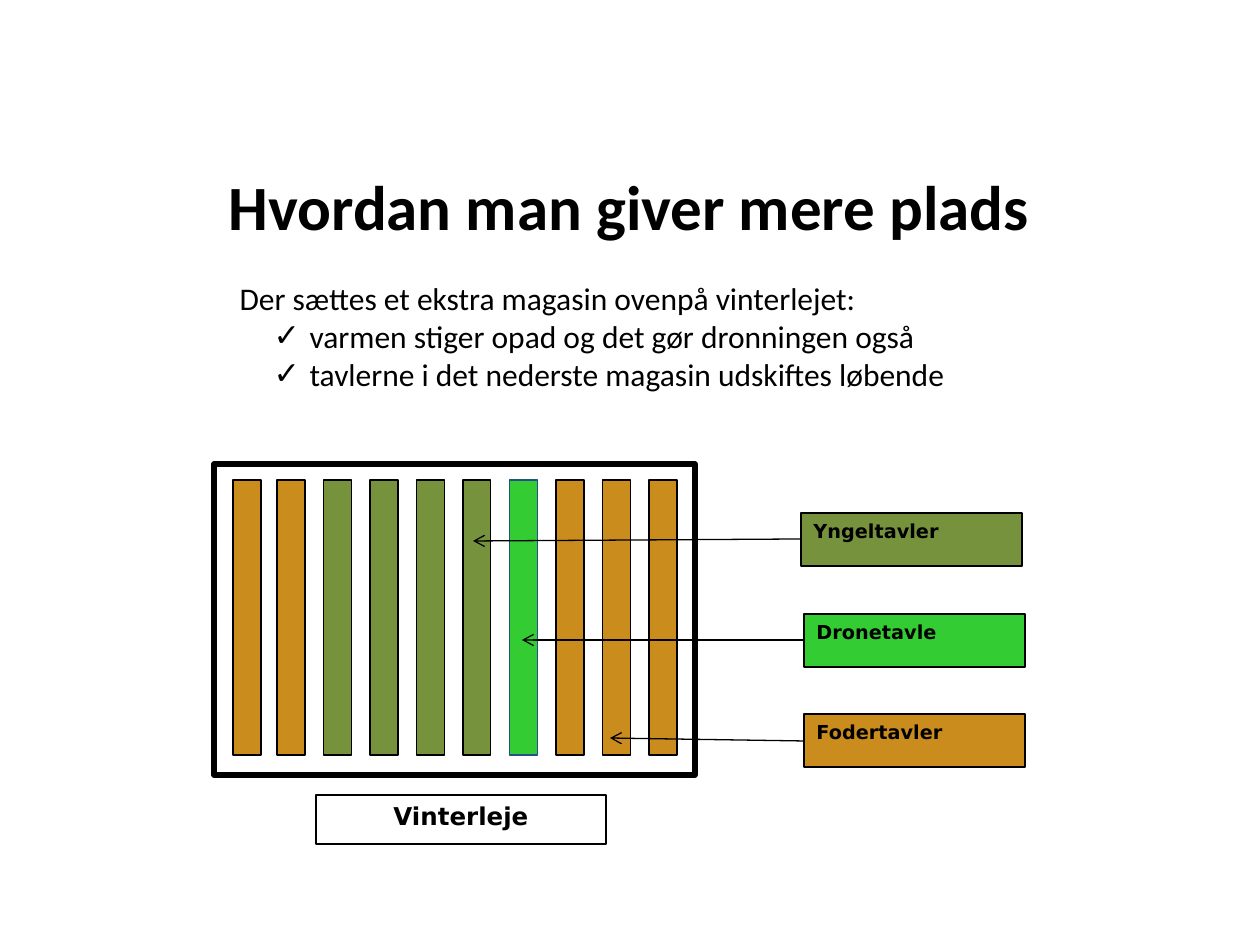
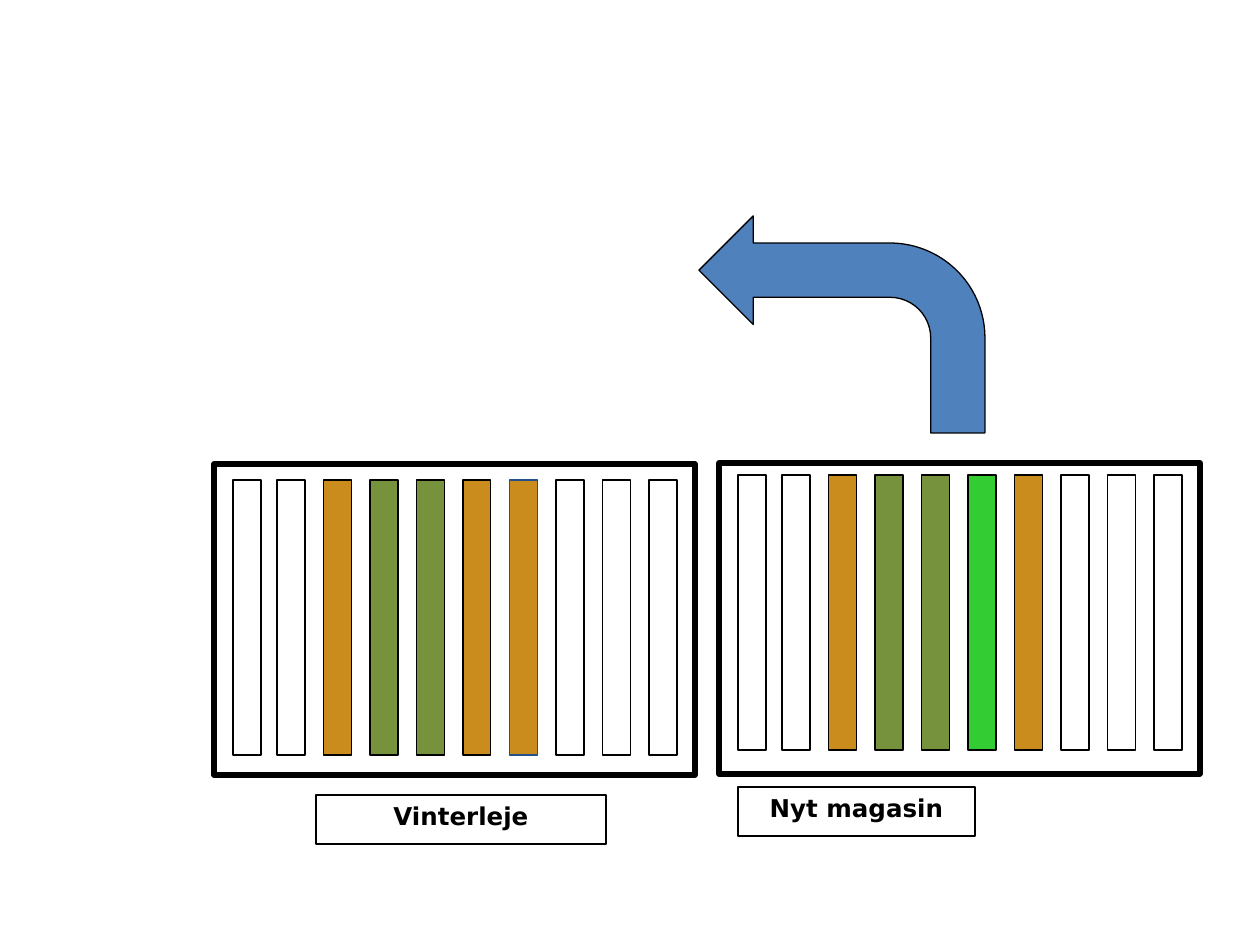
from lxml import etree
from pptx import Presentation
from pptx.dml.color import RGBColor
from pptx.enum.shapes import MSO_CONNECTOR, MSO_SHAPE
from pptx.enum.text import MSO_ANCHOR, MSO_AUTO_SIZE, PP_ALIGN
from pptx.oxml.ns import qn
from pptx.util import Emu, Pt

RECT, BENT_ARROW = MSO_SHAPE.RECTANGLE, MSO_SHAPE.BENT_ARROW
STRAIGHT = MSO_CONNECTOR.STRAIGHT
LEFT, CENTER = PP_ALIGN.LEFT, PP_ALIGN.CENTER
TOP, MIDDLE = MSO_ANCHOR.TOP, MSO_ANCHOR.MIDDLE
NO_AUTOSIZE = MSO_AUTO_SIZE.NONE

# Content
TITLE = "Hvordan man giver mere plads"
INTRO = "Der sættes et ekstra magasin ovenpå vinterlejet:"
REASONS = [
    "varmen stiger opad og det gør dronningen også",
    "tavlerne i det nederste magasin udskiftes løbende",
]
# Frames from left to right: F = food, Y = brood, D = drone, T = empty
WINTER_FRAMES = "FFYYYYDFFF"
WINTER_FRAMES_AFTER = "TTFYYFFTTT"
NEW_FRAMES = "TTFYYDFTTT"
# Label, frame kind, left, top, arrow start and arrow tip
LEGEND = [
    ("Yngeltavler", "Y", 801, 513, (801, 539), (473, 541)),
    ("Dronetavle", "D", 804, 614, (804, 640), (522, 640)),
    ("Fodertavler", "F", 804, 714, (804, 741), (610, 738)),
]

# Shared style
COLORS = {
    "F": "CA8C1C", "Y": "76923C", "D": "33CC33", "T": "FFFFFF",
    "white": "FFFFFF", "black": "000000", "blue": "4F81BD",
    "blue_edge": "23518B",
}
HEAD_FONT, LABEL_FONT = "Calibri", "DejaVu Sans"
PX = 914400 / 126
HIVE_W, HIVE_H = 481, 311
FRAME_W, FRAME_H = 28, 275
FIRST_FRAME, SECOND_FRAME, FRAME_STEP = 19, 63, 46.5
# Hive left and top, frame top, caption box
WINTER = {"left": 214, "top": 464, "frame_top": 480,
          "caption": "Vinterleje", "box": (316, 795, 290, 49)}
NEW = {"left": 719, "top": 463, "frame_top": 475,
       "caption": "Nyt magasin", "box": (738, 787, 237, 49)}


def px(value):
    return Emu(round(value * PX))


def rgb(name):
    return RGBColor.from_string(COLORS[name])


def format_text(paragraph, font, size, bold, align):
    paragraph.alignment = align
    for run in paragraph.runs:
        run.font.name, run.font.size, run.font.bold = font, Pt(size), bold
        run.font.color.rgb = rgb("black")


def add_box(slide, box, fill, edge="black", weight=0.75, kind=RECT):
    shape = slide.shapes.add_shape(kind, *map(px, box))
    shape.shadow.inherit = False
    shape.fill.solid()
    shape.fill.fore_color.rgb = rgb(fill)
    shape.line.color.rgb = rgb(edge)
    shape.line.width = Pt(weight)
    return shape


def add_label(slide, box, text, fill, size, align):
    frame = add_box(slide, box, fill).text_frame
    frame.vertical_anchor = TOP
    frame.text = text
    format_text(frame.paragraphs[0], LABEL_FONT, size, True, align)


def add_hive(slide, hive, frames, edged=None):
    add_box(slide, (hive["left"], hive["top"], HIVE_W, HIVE_H), "white", weight=3)
    for i, kind in enumerate(frames):
        offset = SECOND_FRAME + (i - 1) * FRAME_STEP if i else FIRST_FRAME
        add_box(slide, (hive["left"] + offset, hive["frame_top"], FRAME_W, FRAME_H),
                kind, "blue_edge" if i == edged else "black")
    add_label(slide, hive["box"], hive["caption"], "white", 14, CENTER)


def add_pointer(slide, start, tip):
    pointer = slide.shapes.add_connector(STRAIGHT, *map(px, start + tip))
    pointer.line.color.rgb = rgb("black")
    pointer.line.width = Pt(0.75)
    etree.SubElement(pointer.line._get_or_add_ln(), qn("a:tailEnd"), type="arrow")
    etree.SubElement(pointer._element.spPr, qn("a:effectLst"))


def place(holder, box, anchor):
    holder.left, holder.top, holder.width, holder.height = map(px, box)
    frame = holder.text_frame
    frame.word_wrap = True
    frame.auto_size = NO_AUTOSIZE
    frame.vertical_anchor = anchor
    return frame


def set_bullet(paragraph, mark=None):
    props = paragraph._p.get_or_add_pPr()
    props.set("marL", str(px(70 if mark else 0)))
    props.set("indent", str(px(-36 if mark else 0)))
    if mark:
        etree.SubElement(props, qn("a:buFont"), typeface=LABEL_FONT)
        etree.SubElement(props, qn("a:buChar"), char=mark)
    else:
        etree.SubElement(props, qn("a:buNone"))


def build_winter_slide(prs):
    slide = prs.slides.add_slide(prs.slide_layouts[1])
    title = place(slide.shapes.title, (137, 160, 984, 91), MIDDLE)
    title.text = TITLE
    format_text(title.paragraphs[0], HEAD_FONT, 36, True, CENTER)

    body = place(slide.placeholders[1], (227, 273, 824, 127), TOP)
    body.text = "\n".join([INTRO] + REASONS)
    for i, paragraph in enumerate(body.paragraphs):
        set_bullet(paragraph, "✓" if i else None)
        paragraph.space_before = Pt(0)
        format_text(paragraph, HEAD_FONT, 18, False, LEFT)

    # Legend boxes, hive, then arrows on top
    for text, kind, left, top, _, _ in LEGEND:
        add_label(slide, (left, top, 221, 53), text, kind, 11, LEFT)
    add_hive(slide, WINTER, WINTER_FRAMES, edged=6)
    for *_, start, tip in LEGEND:
        add_pointer(slide, start, tip)


def build_new_box_slide(prs):
    slide = prs.slides.add_slide(prs.slide_layouts[6])
    add_hive(slide, WINTER, WINTER_FRAMES_AFTER, edged=6)
    add_hive(slide, NEW, NEW_FRAMES)
    # Arrow from the new box to the place above the winter box
    move = add_box(slide, (699, 216, 286, 217), "blue", kind=BENT_ARROW)
    move._element.spPr.find(qn("a:xfrm")).set("flipH", "1")


def main():
    prs = Presentation()
    prs.slide_width, prs.slide_height = px(1260), px(945)
    build_winter_slide(prs)
    build_new_box_slide(prs)
    prs.save("out.pptx")


if __name__ == "__main__":
    main()
